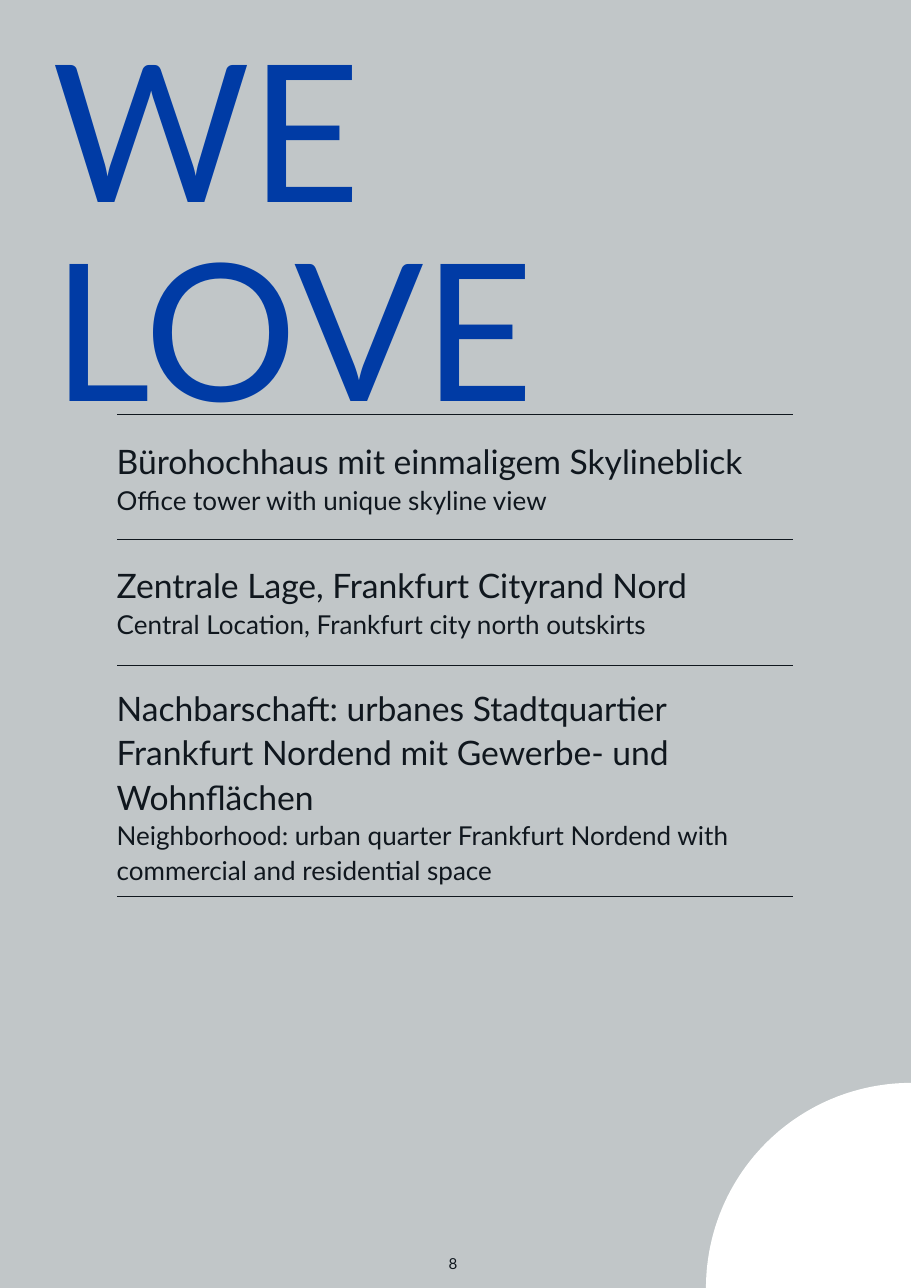
from dataclasses import dataclass
from math import cos, pi, sin

from lxml.etree import SubElement
from pptx import Presentation
from pptx.dml.color import RGBColor
from pptx.enum.shapes import MSO_CONNECTOR as Connector
from pptx.enum.text import MSO_ANCHOR as Anchor, MSO_AUTO_SIZE as AutoSize, PP_ALIGN as Align
from pptx.oxml.ns import qn
from pptx.util import Pt

WIDTH, HEIGHT = 595.44, 841.68


@dataclass(frozen=True)
class Theme:
    font: str = "Lato"
    paper: RGBColor = RGBColor(0xC1, 0xC6, 0xC8)
    ink: RGBColor = RGBColor(0x10, 0x17, 0x1E)
    accent: RGBColor = RGBColor(0x00, 0x3B, 0xA5)
    corner: RGBColor = RGBColor(0xFF, 0xFF, 0xFF)
    title_size: float = 125
    german_size: float = 22
    english_size: float = 17
    number_size: float = 9.9
    rule_width: float = 0.5


class Page:
    def __init__(self, slide, theme):
        self.slide, self.theme = slide, theme
        background = slide.background.fill
        background.solid()
        background.fore_color.rgb = theme.paper

    def prepare(self, shape, left, top, width, height):
        shape.left, shape.top = Pt(left), Pt(top)
        shape.width, shape.height = Pt(width), Pt(height)
        frame = shape.text_frame
        frame.margin_left = frame.margin_top = frame.margin_right = frame.margin_bottom = 0
        frame.word_wrap, frame.auto_size = True, AutoSize.NONE
        frame.vertical_anchor = Anchor.TOP
        return frame

    def set_text(self, paragraph, text, size, color, spacing=None, align=Align.LEFT):
        paragraph.text = text
        paragraph.alignment = align
        paragraph.line_spacing = spacing
        for run in paragraph.runs:
            run.font.name, run.font.size = self.theme.font, Pt(size)
            run.font.color.rgb = color

    def title(self, text, *box):
        frame = self.prepare(self.slide.shapes.title, *box)
        self.set_text(frame.paragraphs[0], text, self.theme.title_size, self.theme.accent, Pt(130))

    def text_box(self, *box):
        return self.prepare(self.slide.shapes.add_textbox(0, 0, 0, 0), *box)

    def page_number(self, text, *box):
        frame = self.text_box(*box)
        self.set_text(frame.paragraphs[0], text, self.theme.number_size, self.theme.ink,
                      align=Align.CENTER)

    def benefits(self, pairs, *box):
        theme, frame = self.theme, self.text_box(*box)
        for index, (german, english) in enumerate(pairs):
            heading = frame.add_paragraph() if index else frame.paragraphs[0]
            self.set_text(heading, german, theme.german_size, theme.ink, 1.1)
            if index:
                heading.space_before = Pt(29)
            self.set_text(frame.add_paragraph(), english, theme.english_size, theme.ink, 1.1)

    def rule(self, left, top, width):
        line = self.slide.shapes.add_connector(
            Connector.STRAIGHT, Pt(left), Pt(top), Pt(left + width), Pt(top))
        line.line.color.rgb = self.theme.ink
        line.line.width = Pt(self.theme.rule_width)
        SubElement(line._element.spPr, qn("a:effectLst"))

    def quarter_circle(self, radius, steps=90):
        angles = [pi / 2 * step / steps for step in range(steps + 1)]
        arc = [(Pt(WIDTH - radius * cos(angle)), Pt(HEIGHT - radius * sin(angle)))
               for angle in angles]
        builder = self.slide.shapes.build_freeform(Pt(WIDTH), Pt(HEIGHT))
        builder.add_line_segments(arc, close=True)
        shape = builder.convert_to_shape()
        shape.shadow.inherit = False
        shape.fill.solid()
        shape.fill.fore_color.rgb = self.theme.corner
        shape.line.fill.background()


def main():
    presentation = Presentation()
    presentation.slide_width, presentation.slide_height = Pt(WIDTH), Pt(HEIGHT)
    title_only = presentation.slide_layouts[5]
    page = Page(presentation.slides.add_slide(title_only), Theme())

    page.quarter_circle(134)
    page.page_number("8", 272, 819.4, 48, 10)
    page.title("WE LOVE", 34.6, 27.4, 532, 252)
    page.benefits([
        ("Bürohochhaus mit einmaligem Skylineblick",
         "Office tower with unique skyline view"),
        ("Zentrale Lage, Frankfurt Cityrand Nord",
         "Central Location, Frankfurt city north outskirts"),
        ("Nachbarschaft: urbanes Stadtquartier Frankfurt Nordend mit Gewerbe- und Wohnflächen",
         "Neighborhood: urban quarter Frankfurt Nordend with commercial and residential space"),
    ], 76.3, 285.8, 449.3, 242.6)
    for top in (270.7, 352.8, 434.9, 586.1):
        page.rule(76.8, top, 441.4)

    presentation.save("out.pptx")


if __name__ == "__main__":
    main()
